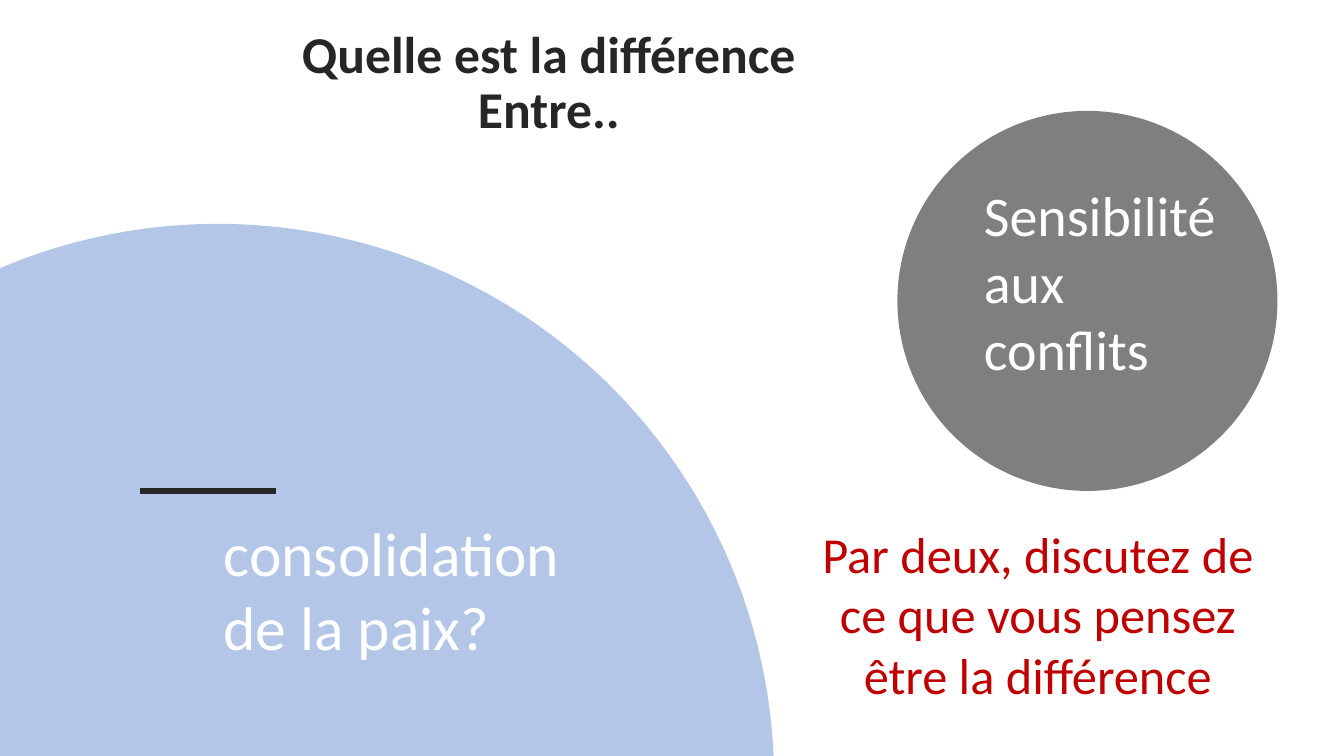
from math import acos, asin, cos, pi, sin

from lxml.etree import SubElement as Sub
from pptx import Presentation
from pptx.dml.color import RGBColor
from pptx.enum.shapes import MSO_CONNECTOR as Link, MSO_SHAPE as Form
from pptx.enum.text import MSO_ANCHOR as Anchor, MSO_AUTO_SIZE as Fit, PP_ALIGN as Align
from pptx.oxml.ns import qn
from pptx.util import Inches, Pt

WIDE, HIGH = Inches(13.33), Inches(7.5)


def paint(code):
    return RGBColor.from_string(code)


def put(item, style):
    for name, value in style.items():
        setattr(item, name, value)


class Page:
    face = "Calibri"
    dark = "262626"

    def __init__(self, deck):
        self.slide = deck.slides.add_slide(deck.slide_layouts[5])
        self.shapes = self.slide.shapes

    def box(self, left, top, width, height):
        return [round(share * side / 100) for share, side in
                zip((left, top, width, height), (WIDE, HIGH, WIDE, HIGH))]

    def tint(self, shape, code, alpha):
        shape.shadow.inherit = False
        shape.fill.solid()
        shape.fill.fore_color.rgb = paint(code)
        shape.line.fill.background()
        tone = shape._element.spPr.find(".//" + qn("a:srgbClr"))
        Sub(tone, qn("a:alpha"), val=str(alpha * 1000))

    def letter(self, frame, words, size, code, align=Align.LEFT, **more):
        put(frame, {"word_wrap": True, "auto_size": Fit.NONE})
        line = frame.paragraphs[0]
        line.text = words
        line.alignment = align
        for run in line.runs:
            put(run.font, {"name": self.face, "size": Pt(size), **more})
            run.font.color.rgb = paint(code)
        return line

    def title(self, area, words, size):
        head = self.shapes.title
        put(head, dict(zip(("left", "top", "width", "height"), self.box(*area))))
        head.text_frame.vertical_anchor = Anchor.BOTTOM
        line = self.letter(head.text_frame, words, size, self.dark, Align.CENTER, bold=True)
        line.line_spacing = 0.9

    def text(self, area, words, size, code, align=Align.LEFT):
        note = self.shapes.add_textbox(*self.box(*area))
        self.letter(note.text_frame, words, size, code, align)

    def disc(self, area, code, alpha):
        self.tint(self.shapes.add_shape(Form.OVAL, *self.box(*area)), code, alpha)

    def dome(self, mid, low, ray, code, alpha, steps=120):
        mid, low, ray = (round(share * WIDE / 100) for share in (mid, low, ray))
        first, last = pi - acos(mid / ray), asin((low - HIGH) / ray)
        turns = [first + (last - first) * step / steps for step in range(steps + 1)]
        arc = [(mid + ray * cos(turn), low - ray * sin(turn)) for turn in turns]
        pen = self.shapes.build_freeform(0, HIGH)
        pen.add_line_segments(arc, close=True)
        self.tint(pen.convert_to_shape(), code, alpha)

    def rule(self, left, right, top, size):
        start, level, end, same = self.box(left, top, right, top)
        bar = self.shapes.add_connector(Link.STRAIGHT, start, level, end, same)
        bar.line.width = Pt(size)
        bar.line.color.rgb = paint(self.dark)
        Sub(bar._element.spPr, qn("a:effectLst"))


def main():
    deck = Presentation()
    put(deck, {"slide_width": WIDE, "slide_height": HIGH})
    page = Page(deck)
    page.title((14.85, 10.13, 51.99, 9.07), "Quelle est la différence\nEntre..", 36.9)
    page.dome(16.2, 58.06, 41.4, "4472C4", 40)
    page.rule(10.43, 20.56, 64.93, 4)
    page.disc((66.77, 14.67, 28.28, 50.27), "000000", 50)
    page.text((72.47, 23.2, 18.9, 28.27), "Sensibilité aux conflits", 40, "FFFFFF")
    page.text((15.9, 67.47, 30.83, 21.07), "consolidation de la paix?", 44, "FFFFFF")
    page.text((59.49, 68.53, 35.48, 25.6),
              "Par deux, discutez de ce que vous pensez être la différence",
              36, "C00000", Align.CENTER)
    deck.save("out.pptx")


if __name__ == "__main__":
    main()
